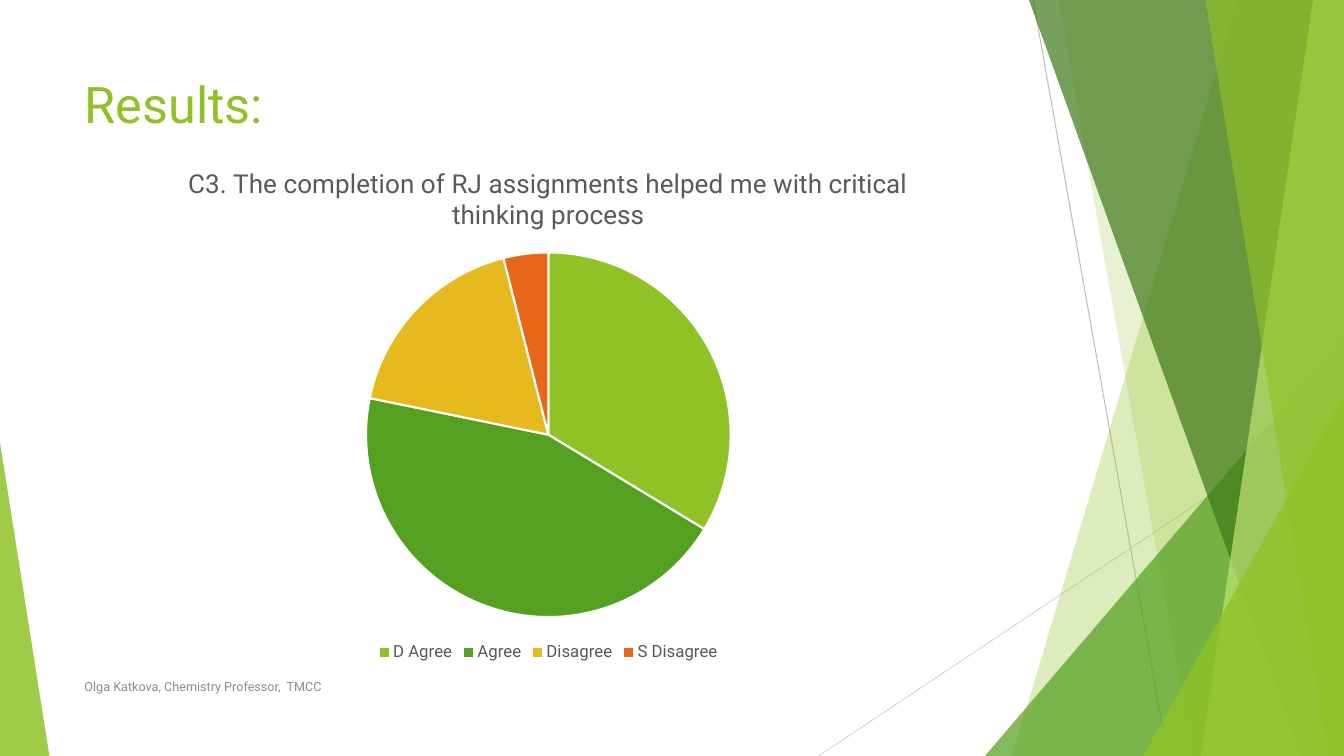
"""Builds the survey results slide with a pie chart and a green faceted border."""
from dataclasses import dataclass

from lxml import etree
from pptx import Presentation
from pptx.chart.data import CategoryChartData
from pptx.dml.color import RGBColor
from pptx.enum.chart import XL_CHART_TYPE, XL_LEGEND_POSITION
from pptx.enum.shapes import MSO_CONNECTOR, MSO_SHAPE
from pptx.enum.text import MSO_ANCHOR, PP_ALIGN
from pptx.oxml.ns import qn
from pptx.util import Pt

PIE = XL_CHART_TYPE.PIE
BOTTOM = XL_LEGEND_POSITION.BOTTOM
STRAIGHT = MSO_CONNECTOR.STRAIGHT
TRIANGLE = MSO_SHAPE.ISOSCELES_TRIANGLE
MIDDLE = MSO_ANCHOR.MIDDLE
LEFT = PP_ALIGN.LEFT
TITLE_ONLY = 5
WIDTH, HEIGHT = 960, 540
MARGIN = 53.3


@dataclass(frozen=True)
class Theme:
    font: str = "Roboto"
    lime: str = "90C226"
    green: str = "54A021"
    forest: str = "3F7819"
    pale: str = "C0E474"
    gold: str = "E6B91E"
    orange: str = "E76618"
    white: str = "FFFFFF"
    black: str = "000000"
    text: str = "595959"
    muted: str = "8C8C8C"
    rule: str = "BFBFBF"
    light_rule: str = "D9D9D9"
    title_size: float = 36
    chart_title_size: float = 18.6
    legend_size: float = 12
    chart_size: float = 10
    footer_size: float = 9


class SlideBuilder:
    def __init__(self, page, theme):
        self.page = page
        self.theme = theme

    def style_font(self, font, size, color):
        font.name = self.theme.font
        font.size = Pt(size)
        font.color.rgb = RGBColor.from_string(color)

    def style_fill(self, shape, color, opacity):
        shape.shadow.inherit = False
        shape.fill.solid()
        shape.fill.fore_color.rgb = RGBColor.from_string(color)
        shape.line.fill.background()
        color_node = shape._element.spPr.find(f"{qn('a:solidFill')}/{qn('a:srgbClr')}")
        etree.SubElement(color_node, qn("a:alpha")).set("val", str(opacity * 1000))

    def line(self, start, end, color):
        connector = self.page.shapes.add_connector(
            STRAIGHT, *(Pt(value) for value in (*start, *end)))
        connector.line.color.rgb = RGBColor.from_string(color)
        connector.line.width = Pt(0.75)
        etree.SubElement(connector._element.spPr, qn("a:effectLst"))

    def shard(self, top_x, bottom_x, color, opacity):
        builder = self.page.shapes.build_freeform(Pt(top_x), Pt(0))
        corners = ((WIDTH, 0), (WIDTH, HEIGHT), (bottom_x, HEIGHT))
        builder.add_line_segments([(Pt(x), Pt(y)) for x, y in corners])
        self.style_fill(builder.convert_to_shape(), color, opacity)

    def corner(self, left, top, width, apex, color, opacity):
        shape = self.page.shapes.add_shape(
            TRIANGLE, Pt(left), Pt(top), Pt(width), Pt(HEIGHT - top))
        shape.adjustments[0] = apex
        self.style_fill(shape, color, opacity)

    def set_text(self, box, text, size, color):
        frame = box.text_frame
        frame.text = text
        frame.word_wrap = True
        frame.vertical_anchor = MIDDLE
        para = frame.paragraphs[0]
        para.alignment = LEFT
        self.style_font(para.runs[0].font, size, color)

    def title(self, text, left, top, width, height):
        box = self.page.shapes.title
        box.left, box.top, box.width, box.height = map(Pt, (left, top, width, height))
        self.set_text(box, text, self.theme.title_size, self.theme.lime)

    def footer(self, text, left, top, width, height):
        box = self.page.shapes.add_textbox(*map(Pt, (left, top, width, height)))
        self.set_text(box, text, self.theme.footer_size, self.theme.muted)

    def pie(self, question, answers, left, top, width, height):
        theme = self.theme
        data = CategoryChartData()
        data.categories = [label for label, _, _ in answers]
        data.add_series(question, [count for _, count, _ in answers])
        chart = self.page.shapes.add_chart(
            PIE, *map(Pt, (left, top, width, height)), data).chart
        self.style_font(chart.font, theme.chart_size, theme.black)

        chart.has_title = True
        heading = chart.chart_title
        heading.include_in_layout = False
        heading.text_frame.text = question
        span = heading.text_frame.paragraphs[0].runs[0]
        self.style_font(span.font, theme.chart_title_size, theme.text)
        span.font.bold = False

        chart.has_legend = True
        chart.legend.position = BOTTOM
        chart.legend.include_in_layout = False
        self.style_font(chart.legend.font, theme.legend_size, theme.text)

        plot = chart.plots[0]
        plot.vary_by_categories = True
        for index, (_, _, color) in enumerate(answers):
            slice_format = plot.series[0].points[index].format
            slice_format.fill.solid()
            slice_format.fill.fore_color.rgb = RGBColor.from_string(color)
            slice_format.line.color.rgb = RGBColor.from_string(theme.white)
            slice_format.line.width = Pt(1.5)


def main():
    theme = Theme()
    deck = Presentation()
    deck.slide_width, deck.slide_height = Pt(WIDTH), Pt(HEIGHT)
    page = deck.slides.add_slide(deck.slide_layouts[TITLE_ONLY])
    slide = SlideBuilder(page, theme)

    slide.line((738, 0), (834, HEIGHT), theme.rule)
    slide.line((WIDTH, 290), (584.6, HEIGHT), theme.light_rule)
    slide.shard(884, 723, theme.lime, 30)
    slide.shard(756, 852, theme.lime, 20)
    slide.corner(703.5, 240, 256.5, 1, theme.green, 72)
    slide.shard(735, 929.5, theme.forest, 70)
    slide.shard(938, 858, theme.pale, 70)
    slide.shard(861, 949, theme.lime, 65)
    slide.corner(816.5, 283, 143.5, 1, theme.lime, 80)
    slide.corner(0, 316, 35.3, 0, theme.lime, 85)

    slide.title("Results:", MARGIN, 48.2, 676.8, 51.1)
    answers = (
        ("D Agree", 34, theme.lime),
        ("Agree", 45, theme.green),
        ("Disagree", 18, theme.gold),
        ("S Disagree", 4, theme.orange),
    )
    slide.pie(
        "C3. The completion of RJ assignments helped me with critical thinking process",
        answers, MARGIN, 104.4, 676.8, 371.5)
    slide.footer("Olga Katkova, Chemistry Professor,  TMCC", MARGIN, 476, 496, 28.8)
    deck.save("out.pptx")


if __name__ == "__main__":
    main()
